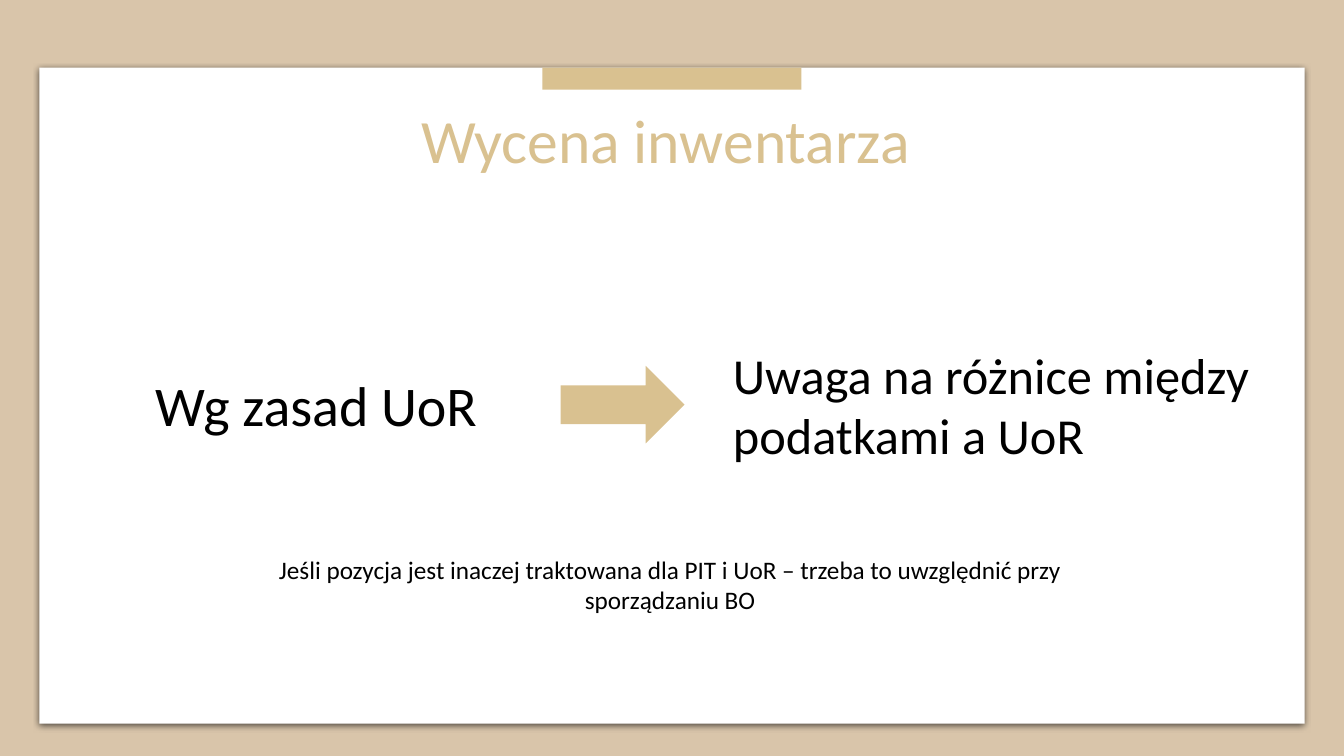
from dataclasses import dataclass

from lxml.etree import SubElement
from pptx import Presentation
from pptx.dml.color import RGBColor
from pptx.enum.shapes import MSO_SHAPE as Preset
from pptx.enum.text import MSO_ANCHOR as Anchor, MSO_AUTO_SIZE as AutoSize, PP_ALIGN as Align
from pptx.oxml.ns import qn
from pptx.shapes.autoshape import Shape
from pptx.slide import Slide
from pptx.util import Inches, Pt

COLORS = {"sand": "D9C5AA", "gold": "D9C190", "white": "FFFFFF", "black": "000000"}
FONT = "Calibri"


@dataclass(frozen=True)
class Box:
    left: float
    top: float
    width: float
    height: float

    def lengths(self) -> tuple[int, ...]:
        return tuple(Inches(value) for value in (self.left, self.top, self.width, self.height))


@dataclass(frozen=True)
class Block:
    box: Box
    color: str
    preset: Preset = Preset.RECTANGLE


@dataclass(frozen=True)
class Label:
    box: Box
    text: str
    size: int
    align: Align = Align.LEFT


BACKDROP = Block(Box(0, 0, 13.33, 7.5), "sand")
CARD = Block(Box(0.39, 0.67, 12.55, 6.51), "white")
TAB = Block(Box(5.38, 0.67, 2.57, 0.22), "gold")
ARROW = Block(Box(5.56, 3.63, 1.23, 0.77), "gold", Preset.RIGHT_ARROW)

TITLE_BOX = Box(0.92, 0.96, 11.5, 0.93)
LABELS = (
    Label(Box(1.44, 3.63, 3.68, 0.77), "Wg zasad UoR", 40),
    Label(Box(7.17, 3.36, 5.5, 1.31), "Uwaga na różnice między podatkami a UoR", 36),
    Label(
        Box(2.39, 5.45, 8.51, 0.71),
        "Jeśli pozycja jest inaczej traktowana dla PIT i UoR – "
        "trzeba to uwzględnić przy sporządzaniu BO",
        18,
        Align.CENTER,
    ),
)


def add_block(slide: Slide, block: Block) -> Shape:
    shape = slide.shapes.add_shape(block.preset, *block.box.lengths())
    shape.shadow.inherit = False
    shape.fill.solid()
    shape.fill.fore_color.rgb = RGBColor.from_string(COLORS[block.color])
    shape.line.fill.background()
    return shape


def add_soft_shadow(shape: Shape) -> None:
    effects = shape.element.spPr.find(qn("a:effectLst"))
    shadow = SubElement(
        effects, qn("a:outerShdw"), blurRad=str(Pt(4.5)), dist=str(Pt(1.5)),
        dir="5400000", algn="ctr", rotWithShape="0",
    )
    color = SubElement(shadow, qn("a:srgbClr"), val=COLORS["black"])
    SubElement(color, qn("a:alpha"), val="63000")


def write_text(shape: Shape, text: str, *, size: int, color: str = "black",
               align: Align = Align.LEFT, anchor: Anchor = Anchor.TOP,
               line_spacing: float = 1.0, auto_size: AutoSize = AutoSize.NONE) -> None:
    frame = shape.text_frame
    frame.word_wrap = True
    frame.auto_size = auto_size
    frame.vertical_anchor = anchor
    paragraph = frame.paragraphs[0]
    paragraph.alignment = align
    paragraph.line_spacing = line_spacing
    run = paragraph.add_run()
    run.text = text
    run.font.name = FONT
    run.font.size = Pt(size)
    run.font.color.rgb = RGBColor.from_string(COLORS[color])


def add_title(slide: Slide) -> None:
    title = slide.shapes.title
    title.left, title.top, title.width, title.height = TITLE_BOX.lengths()
    write_text(title, "Wycena inwentarza ", size=44, color="gold", align=Align.CENTER,
               anchor=Anchor.MIDDLE, line_spacing=0.9)
    # Bring the title in front of the card
    title.element.getparent().append(title.element)


def main() -> None:
    presentation = Presentation()
    presentation.slide_width = Inches(13.33)
    presentation.slide_height = Inches(7.5)
    slide = presentation.slides.add_slide(presentation.slide_layouts.get_by_name("Title Only"))

    # Backdrop and white card
    add_block(slide, BACKDROP)
    add_soft_shadow(add_block(slide, CARD))

    # Title and the tab above it
    add_title(slide)
    add_block(slide, TAB)

    # Statements, joined by an arrow, and the closing remark
    for label in LABELS:
        text_box = slide.shapes.add_textbox(*label.box.lengths())
        write_text(text_box, label.text, size=label.size, align=label.align,
                   auto_size=AutoSize.SHAPE_TO_FIT_TEXT)
    add_block(slide, ARROW)

    presentation.save("out.pptx")


if __name__ == "__main__":
    main()
